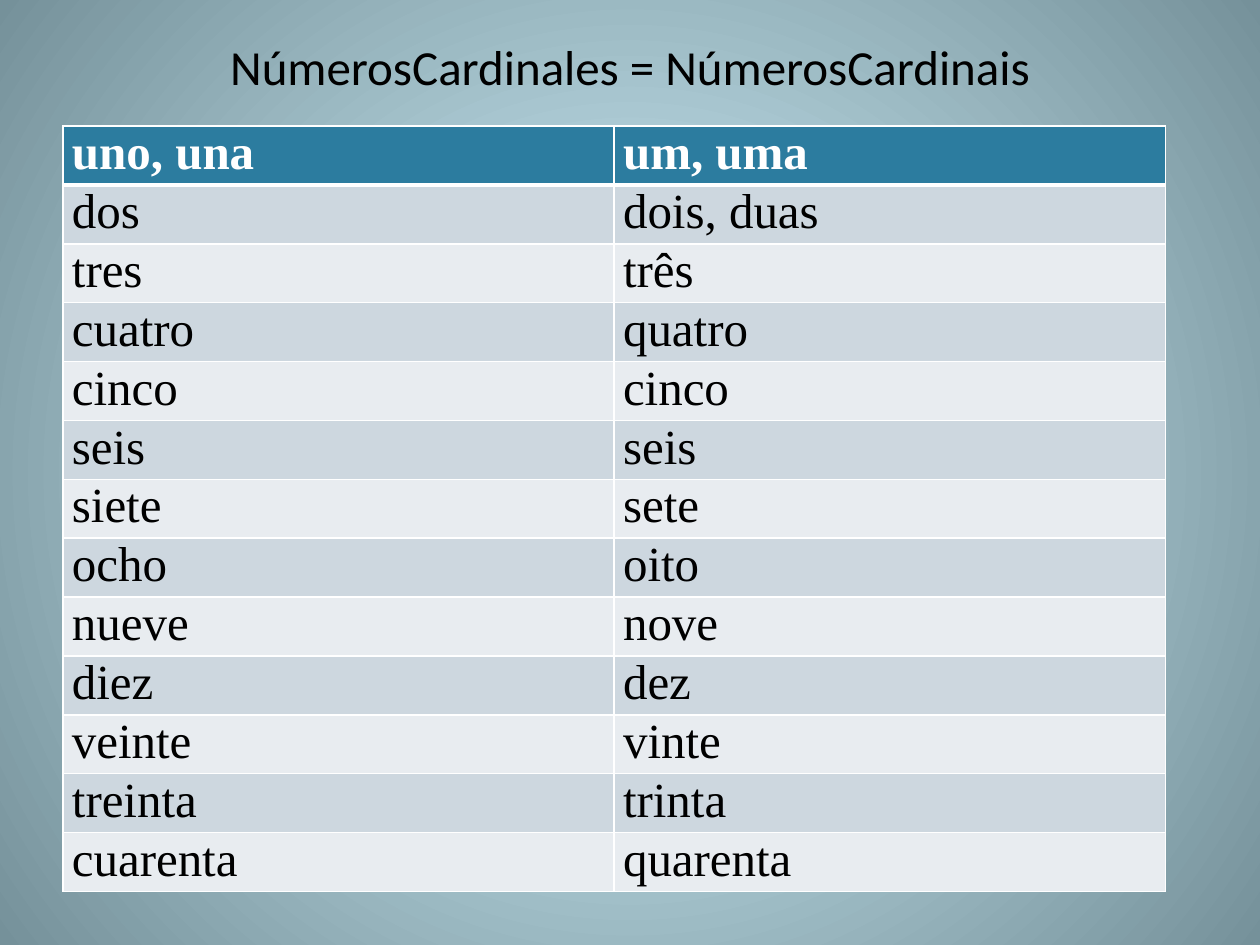
from lxml import etree
from pptx import Presentation
from pptx import util as u
from pptx.dml import color
from pptx.enum import text
from pptx.oxml import ns

COLORS = {
    "glow": "D5F5FF", "edge": "75919A", "header": "2C7C9F",
    "odd": "CDD7DF", "even": "E8ECF0", "white": "FFFFFF", "black": "000000",
}
NUMBERS = [
    ("uno, una", "um, uma"), ("dos", "dois, duas"), ("tres", "três"),
    ("cuatro", "quatro"), ("cinco", "cinco"), ("seis", "seis"),
    ("siete", "sete"), ("ocho", "oito"), ("nueve", "nove"), ("diez", "dez"),
    ("veinte", "vinte"), ("treinta", "trinta"), ("cuarenta", "quarenta"),
]


def rgb(name):
    """Return the named colour."""
    return color.RGBColor.from_string(COLORS[name])


def add_span(para, words, font, tint, bold=False):
    """Add one 28 point run to a paragraph."""
    span = para.add_run()
    span.text = words
    span.font.name = font
    span.font.size = u.Pt(28)
    span.font.bold = bold
    span.font.color.rgb = rgb(tint)


def paint_background(page):
    """Fill the page with a round gradient that is light in the middle."""
    fill = page.background.fill
    fill.gradient()
    for stop, name in zip(fill.gradient_stops, ("glow", "edge")):
        stop.color.rgb = rgb(name)
    gradient = page.element.find(".//" + ns.qn("a:gradFill"))
    for line in gradient.findall(ns.qn("a:lin")):
        gradient.remove(line)
    circle = etree.SubElement(gradient, ns.qn("a:path"), {"path": "circle"})
    sides = dict.fromkeys("ltrb", "50000")
    etree.SubElement(circle, ns.qn("a:fillToRect"), sides)


def add_title(page, left, top, width, height):
    """Place the centred title in the given box."""
    box = page.shapes.add_textbox(left, top, width, height)
    frame = box.text_frame
    frame.word_wrap = True
    frame.vertical_anchor = text.MSO_ANCHOR.MIDDLE
    para = frame.paragraphs[0]
    para.alignment = text.PP_ALIGN.CENTER
    add_span(para, "NúmerosCardinales = NúmerosCardinais", "Calibri", "black")


def add_borders(cell, widths):
    """Draw white borders; widths are points for left, right, top, bottom."""
    properties = cell._tc.get_or_add_tcPr()
    for index, (side, width) in enumerate(zip("LRTB", widths)):
        line = etree.Element(ns.qn(f"a:ln{side}"), {"w": str(u.Pt(width))})
        solid = etree.SubElement(line, ns.qn("a:solidFill"))
        etree.SubElement(solid, ns.qn("a:srgbClr"), {"val": COLORS["white"]})
        properties.insert(index, line)


def add_number_table(page, left, top, width, height):
    """Place the two-language number table in the given box."""
    table = page.shapes.add_table(
        len(NUMBERS), 2, left, top, width, height).table
    for index, words in enumerate(NUMBERS):
        header = index == 0
        band = "header" if header else "odd" if index % 2 else "even"
        above = 3 if index == 1 else 1
        below = 3 if header else 1
        for cell, word in zip(table.rows[index].cells, words):
            cell.margin_left = cell.margin_right = u.Cm(0.18)
            cell.margin_top = cell.margin_bottom = 0
            cell.fill.solid()
            cell.fill.fore_color.rgb = rgb(band)
            add_borders(cell, (1, 1, above, below))
            add_span(cell.text_frame.paragraphs[0], word, "Times New Roman",
                     "white" if header else "black", header)


def main():
    """Build and save the deck."""
    deck = Presentation()
    deck.slide_width, deck.slide_height = u.Cm(25.4), u.Cm(19.05)
    page = deck.slides.add_slide(deck.slide_layouts[6])
    paint_background(page)
    add_title(page, u.Cm(1.27), u.Cm(0.43), u.Cm(22.86), u.Cm(1.78))
    add_number_table(page, u.Cm(1.27), u.Cm(2.54), u.Cm(22.22), u.Cm(15.24))
    deck.save("out.pptx")


if __name__ == "__main__":
    main()
